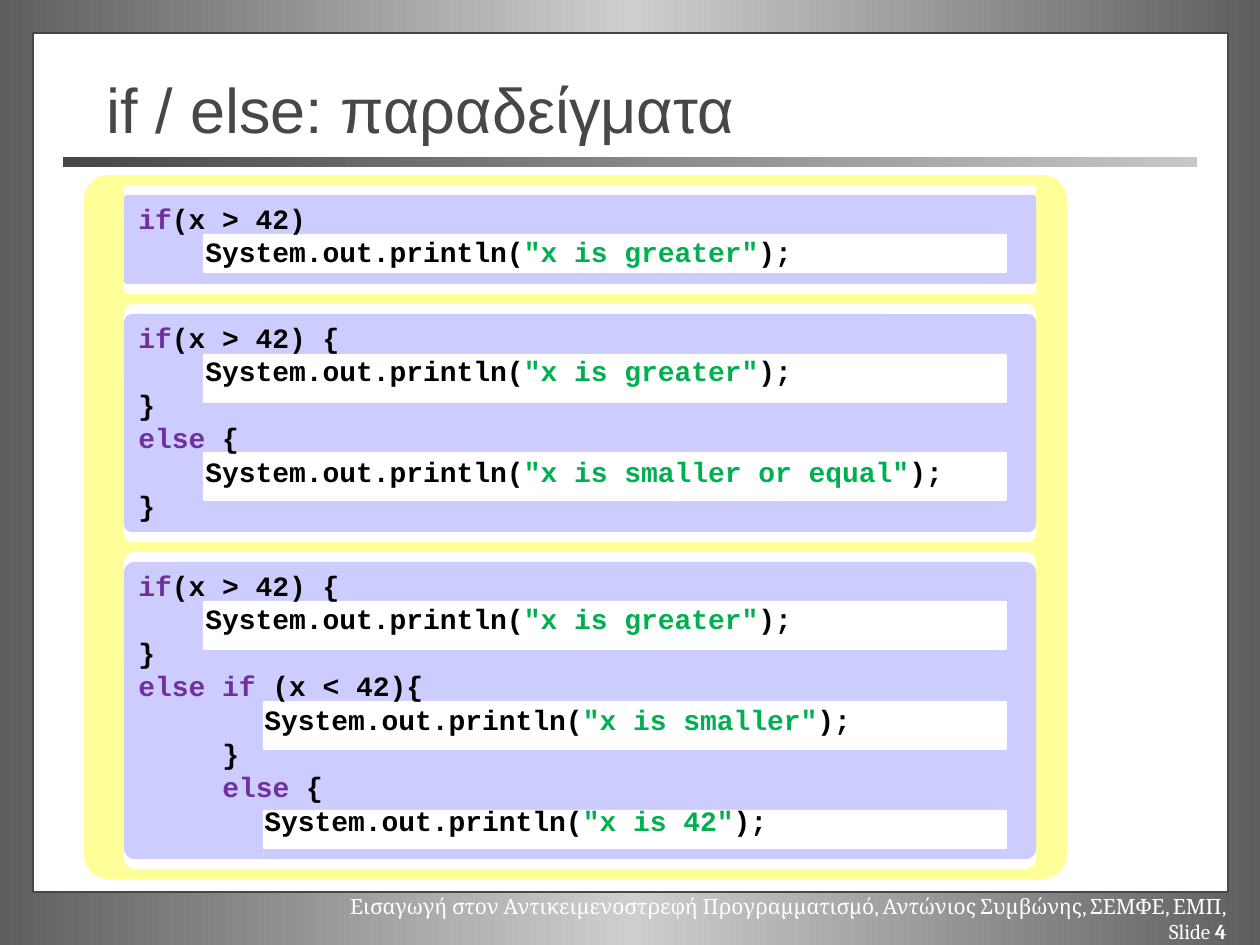
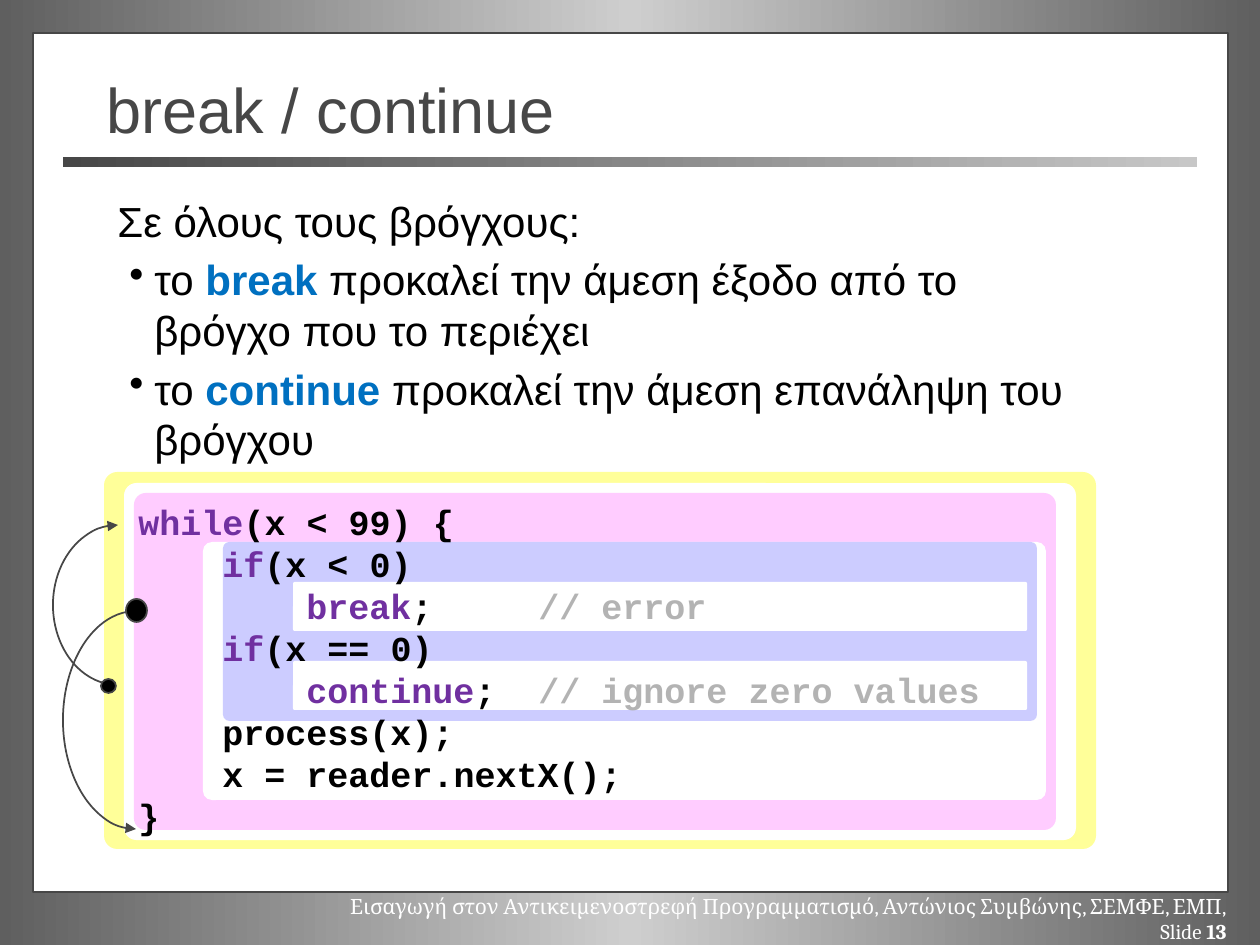
from copy import deepcopy

from lxml import etree
from pptx import Presentation
from pptx.dml.color import RGBColor
from pptx.enum.shapes import MSO_SHAPE
from pptx.enum.text import MSO_ANCHOR, MSO_AUTO_SIZE, PP_ALIGN
from pptx.oxml.ns import qn
from pptx.util import Pt

RECT, ROUND = MSO_SHAPE.RECTANGLE, MSO_SHAPE.ROUNDED_RECTANGLE
OVAL, ARC = MSO_SHAPE.OVAL, MSO_SHAPE.ARC
LEFT, RIGHT = PP_ALIGN.LEFT, PP_ALIGN.RIGHT
MIDDLE, NO_FIT = MSO_ANCHOR.MIDDLE, MSO_AUTO_SIZE.NONE

SCALE = 914400 / 126
TITLE_ONLY = 5
WHITE, BLACK, GREY = "FFFFFF", "000000", "474747"
YELLOW, LILAC, PINK = "FFFF99", "CCCCFF", "FFCCFF"
KEYWORD, STRING, COMMENT, TERM = "7030A0", "00B050", "B3B3B3", "0070C0"
FOOTER = "Εισαγωγή στον Αντικειμενοστρεφή Προγραμματισμό, Αντώνιος Συμβώνης, ΣΕΜΦΕ, ΕΜΠ, Slide "


def emu(px):
    return round(px * SCALE)


def rgb(value):
    return RGBColor.from_string(value)


def gradient(fill, *colors):
    fill.gradient()
    fill.gradient_angle = 0
    stops = fill.gradient_stops[0]._gs.getparent()
    while len(stops) < len(colors):
        stops.append(deepcopy(stops[0]))
    for i, (stop, color) in enumerate(zip(fill.gradient_stops, colors)):
        stop.color.rgb = rgb(color)
        stop.position = i / (len(colors) - 1)


def println(message, tabs=1):
    return [("\t" * tabs + "System.out.println(",), (f'"{message}"', STRING), (");",)]


class Deck:
    """Holds the shared style and the current slide."""

    def __init__(self):
        self.prs = Presentation()
        self.prs.slide_width, self.prs.slide_height = emu(1260), emu(945)
        gradient(self.prs.slide_master.background.fill, "5F5F5F", "CECECE", "5F5F5F")

    def slide(self, title, number):
        self.s = self.prs.slides.add_slide(self.prs.slide_layouts[TITLE_ONLY])
        self.shape(RECT, 33, 33, 1195, 859, WHITE, GREY)
        self.text(self.box(320, 887, 919, 38), [[(FOOTER, WHITE), (str(number), WHITE, True)]],
                  12, "Cambria", align=RIGHT)
        bar = self.shape(RECT, 63, 157, 1134, 10)
        gradient(bar.fill, GREY, "C7C7C7")
        sp = self.s.shapes.title
        bar._element.addnext(sp._element)
        sp.left, sp.top, sp.width, sp.height = map(emu, (94, 69, 1071, 78))
        self.text(sp, [[(title, GREY)]], 36, "Arial")
        sp.text_frame.vertical_anchor = MIDDLE

    def shape(self, kind, x, y, w, h, fill=None, line=None):
        sp = self.s.shapes.add_shape(kind, *map(emu, (x, y, w, h)))
        sp.shadow.inherit = False
        if fill:
            sp.fill.solid()
            sp.fill.fore_color.rgb = rgb(fill)
        else:
            sp.fill.background()
        if line:
            sp.line.color.rgb = rgb(line)
            sp.line.width = Pt(1)
        else:
            sp.line.fill.background()
        return sp

    def panel(self, x, y, w, h, fill=WHITE):
        self.shape(ROUND, x, y, w, h, fill).adjustments[0] = 0.035

    def half_loop(self, x, y, radius, h, end, start=90):
        sp = self.shape(ARC, x, y, 2 * radius, h, line=GREY)
        sp.adjustments[0], sp.adjustments[1] = start * 0.6, 270 * 0.6
        etree.SubElement(sp.line._get_or_add_ln(), qn(f"a:{end}"), type="triangle")

    def box(self, x, y, w, h):
        return self.s.shapes.add_textbox(*map(emu, (x, y, w, h)))

    def run(self, p, size, font, content, color=BLACK, bold=False):
        for i, part in enumerate(content.split("\n")):
            if i:
                p.add_line_break()
            r = p.add_run()
            r.text = part
            r.font.name, r.font.size = font, Pt(size)
            r.font.bold, r.font.color.rgb = bold, rgb(color)

    def text(self, sp, lines, size, font, align=LEFT):
        tf = sp.text_frame
        tf.word_wrap, tf.auto_size = True, NO_FIT
        for i, line in enumerate(lines):
            p = tf.paragraphs[0] if i == 0 else tf.add_paragraph()
            p.alignment, p.line_spacing = align, Pt(size * 1.2)
            for parts in line:
                self.run(p, size, font, *parts)
        return tf

    def code(self, x, y, w, h, lines, size, stops):
        tf = self.text(self.box(x, y, w, h), lines, size, "Courier New")
        for p in tf.paragraphs:
            for r in p.runs:
                r.font.bold = True
            tabs = etree.SubElement(p._p.get_or_add_pPr(), qn("a:tabLst"))
            for stop in stops:
                etree.SubElement(tabs, qn("a:tab"), pos=str(emu(stop)), algn="l")

    def bullets(self, x, y, w, h, lines, size):
        tf = self.text(self.box(x, y, w, h), lines, size, "Arial")
        for i, p in enumerate(tf.paragraphs):
            p.space_before = Pt(size * 0.2)
            if i:
                pPr = p._p.get_or_add_pPr()
                pPr.set("marL", str(emu(37)))
                pPr.set("indent", str(emu(-25)))
                etree.SubElement(pPr, qn("a:buChar"), char="•")


def if_else_slide(deck):
    deck.slide("if / else: παραδείγματα", 4)
    deck.panel(84, 175, 983, 704, YELLOW)
    test = [("if", KEYWORD), ("(x > 42)",)]
    open_test = [("if", KEYWORD), ("(x > 42) {",)]
    greater = println("x is greater")
    examples = [
        (185, 109, [test, greater]),
        (304, 238, [open_test, greater, [("}",)], [("else", KEYWORD), (" {",)],
                    println("x is smaller or equal"), [("}",)]]),
        (552, 317, [open_test, greater, [("}",)], [("else if ", KEYWORD), ("(x < 42){",)],
                    println("x is smaller", 3), [("\t\t}",)],
                    [("\t\telse", KEYWORD), (" {",)], println("x is 42", 3)]),
    ]
    for y, h, _ in examples:
        deck.panel(124, y, 912, h)
        deck.panel(124, y + 10, 912, h - 20, LILAC)
    for x, y, h in [(203, 234, 39), (203, 354, 49), (203, 452, 49),
                    (203, 601, 49), (263, 701, 49), (263, 810, 39)]:
        deck.panel(x, y, 1007 - x, h)
    for y, h, lines in examples:
        deck.code(126, y + 10, 842, h - 20, lines, 16, (67, 84, 126))


def break_slide(deck):
    deck.slide("break / continue", 13)
    for x, y, w, h, fill in [(104, 472, 992, 377, YELLOW), (124, 483, 952, 357, WHITE),
                             (134, 493, 922, 337, PINK), (203, 542, 843, 258, WHITE),
                             (223, 542, 814, 179, LILAC)]:
        deck.panel(x, y, w, h, fill)
    for y in (582, 661):
        deck.panel(293, y, 734, 49)
    deck.bullets(105, 189, 1008, 287, [
        [("Σε όλους τους βρόγχους:",)],
        [("το ",), ("break ", TERM, True),
         ("προκαλεί την άμεση έξοδο από το\nβρόγχο που το περιέχει",)],
        [("το ",), ("continue ", TERM, True),
         ("προκαλεί την άμεση επανάληψη του\nβρόγχου",)],
    ], 24)
    deck.code(126, 494, 867, 350, [
        [("while", KEYWORD), ("(x < 99) {",)],
        [("\tif", KEYWORD), ("(x < 0)",)],
        [("\t\tbreak", KEYWORD), (";\t",), ("// error", COMMENT)],
        [("\tif", KEYWORD), ("(x == 0)",)],
        [("\t\tcontinue", KEYWORD), (";\t",), ("// ignore zero values", COMMENT)],
        [("\tprocess(x);",)],
        [("\tx = reader.nextX();",)],
        [("}",)],
    ], 20, (84, 168, 400))
    deck.half_loop(63, 611, 73, 218, "headEnd")
    deck.shape(OVAL, 126, 599, 21, 23, BLACK, GREY)
    deck.half_loop(53, 525, 65, 160, "tailEnd", start=99)
    deck.shape(OVAL, 101, 679, 15, 14, BLACK, GREY)


def main():
    deck = Deck()
    if_else_slide(deck)
    break_slide(deck)
    deck.prs.save("out.pptx")


if __name__ == "__main__":
    main()
